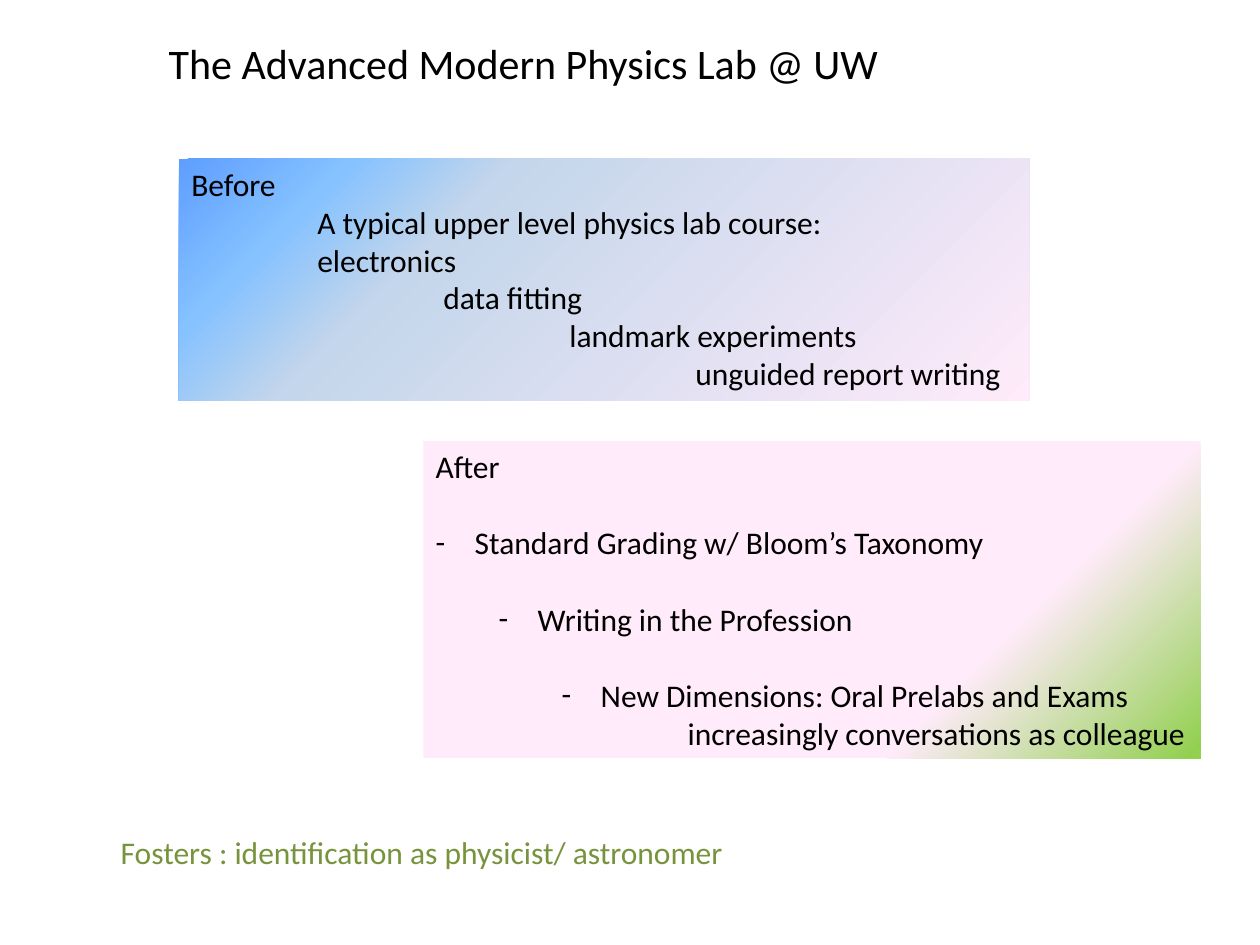
from lxml.etree import SubElement
from pptx import Presentation
from pptx.dml.color import RGBColor
from pptx.enum.shapes import MSO_SHAPE as Shape
from pptx.enum.text import MSO_ANCHOR as Anchor, PP_ALIGN as Align
from pptx.oxml.ns import qn
from pptx.util import Pt

PX = 9144
BLACK = RGBColor(0x00, 0x00, 0x00)
OLIVE = RGBColor(0x77, 0x93, 0x3C)
AZURE = RGBColor(0x5E, 0x9E, 0xFF)
SKY = RGBColor(0x85, 0xC2, 0xFF)
MIST = RGBColor(0xC4, 0xD6, 0xEB)
PINK = RGBColor(0xFF, 0xEB, 0xFA)
GREEN = RGBColor(0x92, 0xD0, 0x50)

TITLE = {"name": "Calibri", "size": Pt(24)}
BODY = {"name": "Calibri", "size": Pt(18)}
BEFORE = [
    ("Before", 0),
    ("A typical upper level physics lab course:", 1),
    ("electronics", 1),
    ("data fitting", 2),
    ("landmark experiments", 3),
    ("unguided report writing", 4),
]
AFTER = [
    "Standard Grading w/ Bloom’s Taxonomy",
    "Writing in the Profession",
    "New Dimensions: Oral Prelabs and Exams",
]


def scale(box):
    """Turn a box in px into EMU."""
    return [value * PX for value in box]


def write_para(frame, text, formats, color=BLACK, left=0, hang=0, level=0, gap=0):
    """Add one paragraph, with a dash when it has a hanging indent."""
    first = not frame.paragraphs[0].runs
    para = frame.paragraphs[0] if first else frame.add_paragraph()
    props = para._p.get_or_add_pPr()
    props.set("marL", str(left * PX))
    props.set("indent", str(-hang * PX))
    if hang:
        SubElement(props, qn("a:buFont"), typeface="Calibri")
        SubElement(props, qn("a:buChar"), char="-")
    for key, value in {"alignment": Align.LEFT, "level": level}.items():
        setattr(para, key, value)
    if gap:
        para.space_before = Pt(gap)
    span = para.add_run()
    span.text = text
    for key, value in formats.items():
        setattr(span.font, key, value)
    span.font.color.rgb = color


def add_line(page, box, text, formats, color):
    """Place a single line of text."""
    frame = page.shapes.add_textbox(*scale(box)).text_frame
    frame.word_wrap = True
    write_para(frame, text, formats, color)


def add_panel(page, box, stops):
    """Place a rectangle and return its gradient element and text frame."""
    panel = page.shapes.add_shape(Shape.RECTANGLE, *scale(box))
    panel.shadow.inherit = False
    panel.line.fill.background()
    panel.fill.gradient()
    gradient = panel._element.spPr.find(qn("a:gradFill"))
    gradient.clear()
    gradient.set("rotWithShape", "1")
    stop_list = SubElement(gradient, qn("a:gsLst"))
    for percent, color in stops:
        stop = SubElement(stop_list, qn("a:gs"), pos=str(percent * 1000))
        SubElement(stop, qn("a:srgbClr"), val=str(color))
    frame = panel.text_frame
    for key, value in {"word_wrap": True, "vertical_anchor": Anchor.TOP}.items():
        setattr(frame, key, value)
    return gradient, frame


def add_before(page, box):
    """Place the panel on the earlier course, stepped by one tab a level."""
    stops = [(0, AZURE), (16, SKY), (31, MIST), (100, PINK)]
    gradient, frame = add_panel(page, box, stops)
    SubElement(gradient, qn("a:lin"), ang="2700000", scaled="0")
    for text, step in BEFORE:
        write_para(frame, text, BODY, left=step * 100)


def add_after(page, box):
    """Place the panel on the new course, with dashes stepped by half a tab."""
    gradient, frame = add_panel(page, box, [(1, GREEN), (29, PINK)])
    focus = SubElement(gradient, qn("a:path"), path="circle")
    SubElement(focus, qn("a:fillToRect"), l="100000", t="100000")
    write_para(frame, "After", BODY)
    for level, text in enumerate(AFTER):
        left = 31 + level * 50
        write_para(frame, text, BODY, left=left, hang=31, level=level, gap=22)
    write_para(frame, "increasingly conversations as colleague", BODY, left=200, level=2)


def main():
    """Build the slide and save it."""
    deck = Presentation()
    deck.slide_width, deck.slide_height = scale((1000, 750))
    page = deck.slides.add_slide(deck.slide_layouts[6])
    add_line(page, (124, 25, 608, 50), "The Advanced Modern Physics Lab @ UW", TITLE, BLACK)
    add_before(page, (142, 126, 675, 192))
    add_after(page, (336, 350, 617, 252))
    closing = "Fosters : identification as physicist/ astronomer"
    add_line(page, (86, 656, 504, 71), closing, BODY, OLIVE)
    deck.save("out.pptx")


if __name__ == "__main__":
    main()
